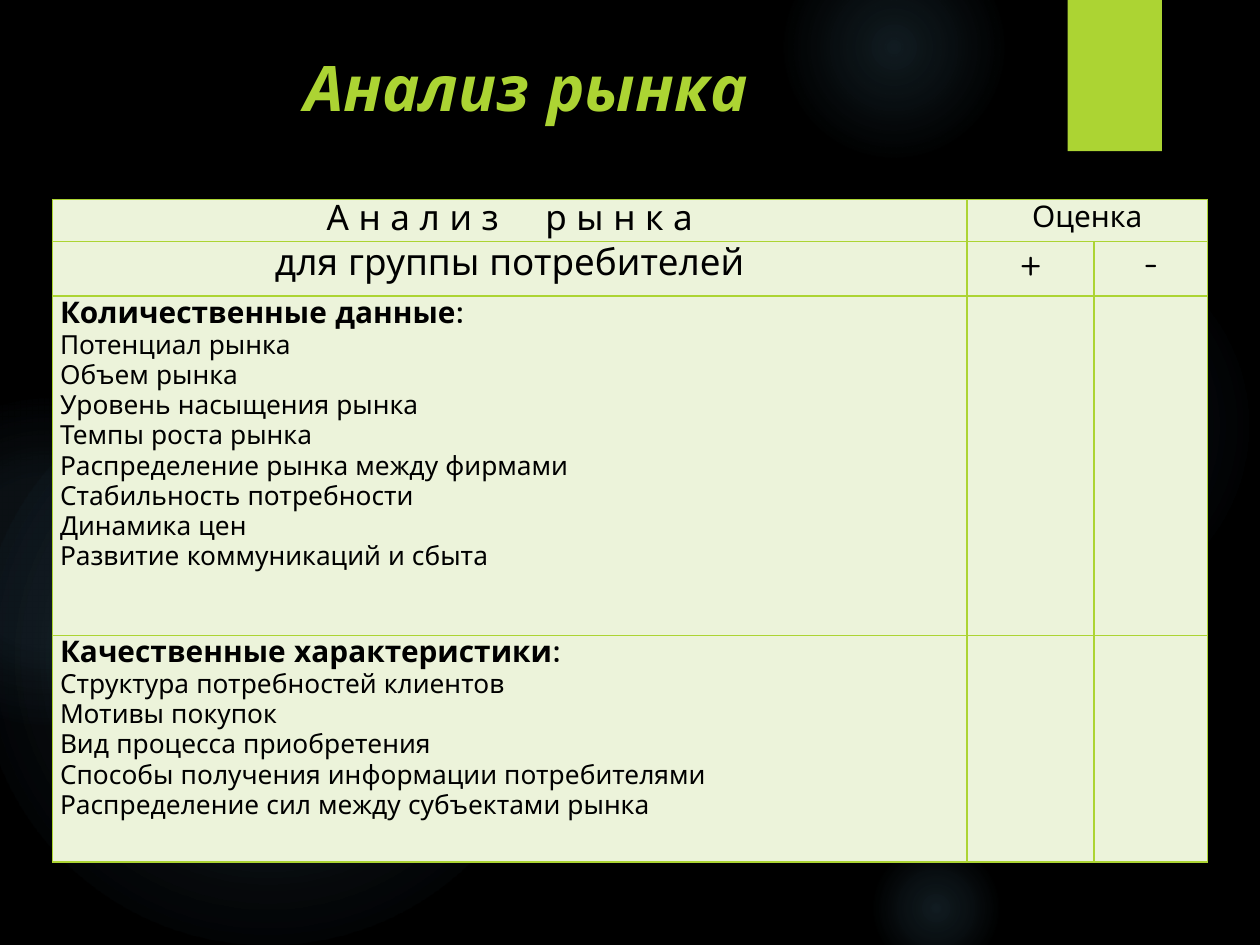
from dataclasses import dataclass

from lxml import etree
from pptx import Presentation
from pptx.dml.color import RGBColor
from pptx.enum.shapes import MSO_SHAPE
from pptx.enum.text import MSO_ANCHOR, PP_ALIGN
from pptx.oxml import parse_xml
from pptx.oxml.ns import nsdecls, qn
from pptx.util import Inches, Pt

OVAL, RECTANGLE = MSO_SHAPE.OVAL, MSO_SHAPE.RECTANGLE
CENTER, LEFT = PP_ALIGN.CENTER, PP_ALIGN.LEFT
MIDDLE = MSO_ANCHOR.MIDDLE
FONT = "Quicksand"
COLORS = {"background": "000000", "accent": "ACD433", "glow": "7AC4F0",
          "cell": "ECF3DA", "text": "000000"}
COLUMNS, ROWS = 120, 90  # slide grid, twelve units to the inch


@dataclass
class Glow:
    left: float
    top: float
    size: float
    center_alpha: int
    middle_alpha: int
    edge: int


@dataclass
class Line:
    text: str
    size: float
    bold: bool = False


GLOWS = [Glow(82.67, 22, 37, 7, 6, 69), Glow(74.67, -6, 21, 14, 7, 73),
         Glow(82.67, 80, 13, 14, 7, 66), Glow(-2, 35, 55, 11, 10, 75),
         Glow(-11, 38, 31, 8, 8, 72)]
COLUMN_WIDTHS = [87.1, 12.1, 10.8]
ROW_HEIGHTS = [4, 5.2, 32.3, 21.6]
SECTIONS = [
    ("Количественные данные:",
     ["Потенциал рынка", "Объем рынка", "Уровень насыщения рынка",
      "Темпы роста рынка", "Распределение рынка между фирмами",
      "Стабильность потребности", "Динамика цен",
      "Развитие коммуникаций и сбыта"]),
    ("Качественные характеристики:",
     ["Структура потребностей клиентов", "Мотивы покупок",
      "Вид процесса приобретения",
      "Способы получения информации потребителями",
      "Распределение сил между субъектами рынка"]),
]


def units(count: float) -> int:
    return Inches(count / 12)


def rgb(name: str) -> RGBColor:
    return RGBColor.from_string(COLORS[name])


def format_font(font, size: float, color: str, bold=False, italic=False) -> None:
    font.name, font.size, font.bold, font.italic = FONT, Pt(size), bold, italic
    font.color.rgb = rgb(color)


def add_plain_shape(slide, kind, left, top, width, height):
    shape = slide.shapes.add_shape(kind, units(left), units(top),
                                   units(width), units(height))
    shape.shadow.inherit = False
    shape.line.fill.background()
    return shape


def add_glow(slide, glow: Glow) -> None:
    shape = add_plain_shape(slide, OVAL, glow.left, glow.top, glow.size, glow.size)
    stops = "".join(
        f'<a:gs pos="{position * 1000}"><a:srgbClr val="{COLORS["glow"]}">'
        f'<a:alpha val="{alpha * 1000}"/></a:srgbClr></a:gs>'
        for position, alpha in [(0, glow.center_alpha), (36, glow.middle_alpha),
                                (glow.edge, 0)])
    gradient = parse_xml(
        f'<a:gradFill {nsdecls("a")}><a:gsLst>{stops}</a:gsLst><a:path path="circle">'
        '<a:fillToRect l="50000" t="50000" r="50000" b="50000"/></a:path></a:gradFill>')
    shape._element.spPr.find(qn("a:prstGeom")).addnext(gradient)


def add_title(slide) -> None:
    box = slide.shapes.add_textbox(units(2), units(0.75), units(96.25), units(15))
    frame = box.text_frame
    frame.word_wrap, frame.vertical_anchor = True, MIDDLE
    frame.text = "Анализ рынка"
    paragraph = frame.paragraphs[0]
    paragraph.alignment = CENTER
    format_font(paragraph.runs[0].font, 36, "accent", bold=True, italic=True)


def style_cell(cell) -> None:
    cell.margin_left = cell.margin_right = Inches(0.06)
    cell.margin_top = cell.margin_bottom = 0
    properties = cell._tc.get_or_add_tcPr()
    for side in ("lnL", "lnR", "lnT", "lnB"):
        border = etree.SubElement(properties, qn(f"a:{side}"), w=str(Pt(0.75)))
        fill = etree.SubElement(border, qn("a:solidFill"))
        etree.SubElement(fill, qn("a:srgbClr"), val=COLORS["accent"])
    cell.fill.solid()
    cell.fill.fore_color.rgb = rgb("cell")


def write_cell(cell, lines: list[Line], alignment, spacing: float) -> None:
    frame = cell.text_frame
    frame.text = "\n".join(line.text for line in lines)
    for paragraph, line in zip(frame.paragraphs, lines):
        paragraph.alignment, paragraph.line_spacing = alignment, spacing
        format_font(paragraph.runs[0].font, line.size, "text", line.bold)


def write_spaced_heading(cell) -> None:
    write_cell(cell, [Line("А н а л и з", 20)], CENTER, 0.88)
    paragraph = cell.text_frame.paragraphs[0]
    for text in (" ", "р ы н к а"):
        run = paragraph.add_run()
        run.text = text
        format_font(run.font, 20, "text")
    # Widen the gap between the two letter-spaced words
    paragraph.runs[1].font._element.set("spc", "2100")


def add_market_table(slide) -> None:
    table = slide.shapes.add_table(
        len(ROW_HEIGHTS), len(COLUMN_WIDTHS), units(5), units(19),
        units(sum(COLUMN_WIDTHS)), units(sum(ROW_HEIGHTS))).table
    for column, width in zip(table.columns, COLUMN_WIDTHS):
        column.width = units(width)
    for row, height in zip(table.rows, ROW_HEIGHTS):
        row.height = units(height)
    for cell in table.iter_cells():
        style_cell(cell)
    table.cell(0, 1).merge(table.cell(0, 2))

    # Heading rows
    write_spaced_heading(table.cell(0, 0))
    for row, column, text, size in [(0, 1, "Оценка", 17),
                                    (1, 0, "для группы потребителей", 21),
                                    (1, 1, "+", 22), (1, 2, "-", 22)]:
        write_cell(table.cell(row, column), [Line(text, size)], CENTER, 0.92)

    # Criteria rows
    for row, (heading, criteria) in enumerate(SECTIONS, start=2):
        lines = [Line(heading, 17, True)] + [Line(text, 15) for text in criteria]
        write_cell(table.cell(row, 0), lines, LEFT, 0.92)


def main() -> None:
    presentation = Presentation()
    presentation.slide_width, presentation.slide_height = units(COLUMNS), units(ROWS)
    slide = presentation.slides.add_slide(presentation.slide_layouts[6])
    slide.background.fill.solid()
    slide.background.fill.fore_color.rgb = rgb("background")

    # Backdrop
    for glow in GLOWS:
        add_glow(slide, glow)
    tab = add_plain_shape(slide, RECTANGLE, 101.67, 0, 9, 14.4)
    tab.fill.solid()
    tab.fill.fore_color.rgb = rgb("accent")

    # Content
    add_title(slide)
    add_market_table(slide)
    presentation.save("out.pptx")


if __name__ == "__main__":
    main()
